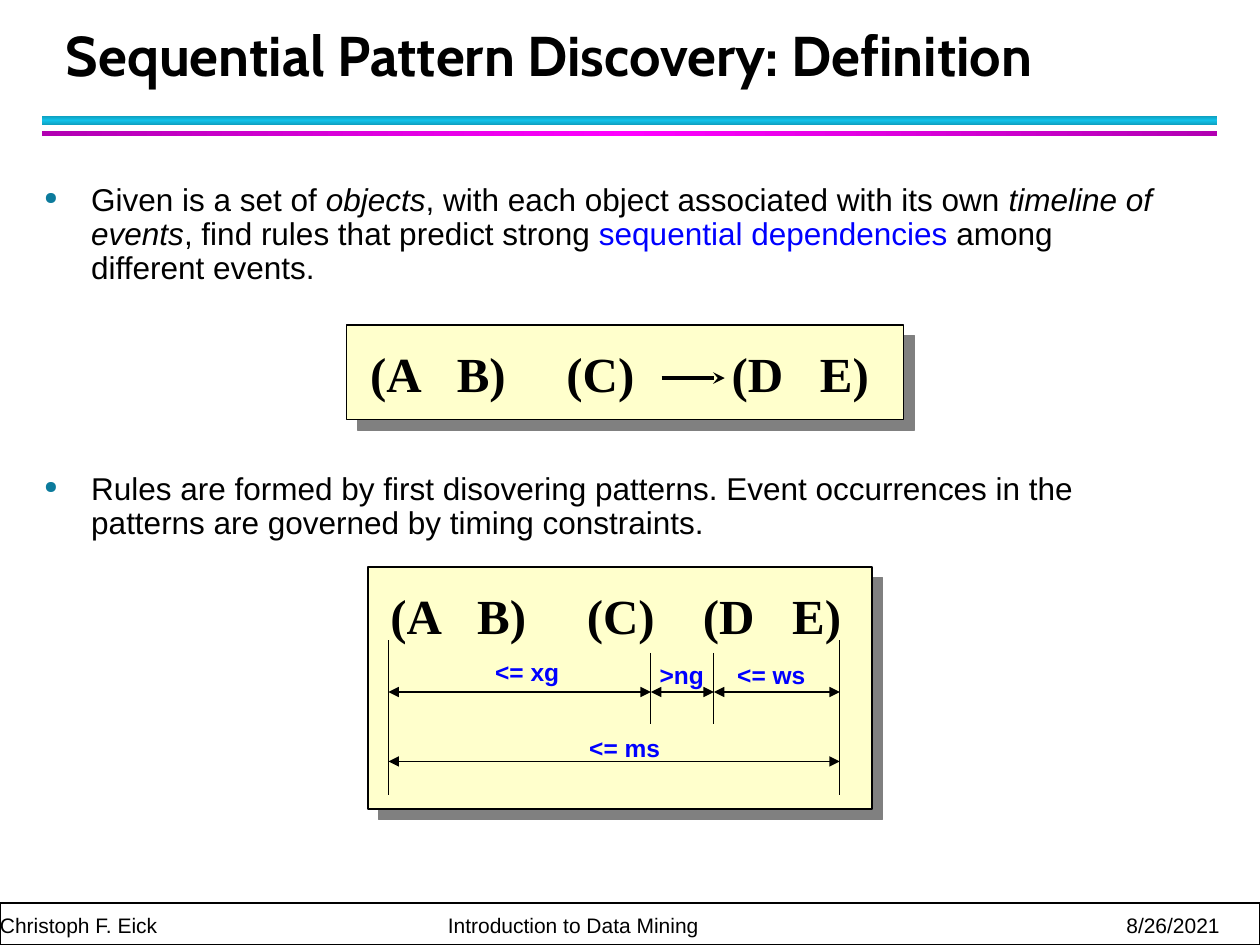
from copy import deepcopy
from dataclasses import dataclass

from lxml.etree import SubElement
from pptx import Presentation
from pptx.dml.color import RGBColor
from pptx.enum.shapes import MSO_CONNECTOR as CONN, MSO_SHAPE as SHAPE
from pptx.enum.text import MSO_ANCHOR as ANCHOR, MSO_AUTO_SIZE as AUTO, PP_ALIGN as ALIGN
from pptx.oxml.ns import qn
from pptx.util import Cm, Pt


@dataclass(frozen=True)
class Theme:
    black: str = "000000"
    white: str = "FFFFFF"
    blue: str = "0000FF"
    cream: str = "FFFFCC"
    gray: str = "808080"
    bullet: str = "0C7B9C"
    cyan: tuple = ("0E9BBA", "12C2E9")
    magenta: tuple = ("B200B2", "FF00FF")
    title_font: str = "Cabin"
    body_font: str = "Arial"
    pattern_font: str = "Times New Roman"
    title: int = 32
    pattern: int = 28
    body: int = 18
    label: int = 14
    footer: int = 12


T = Theme()
rgb = RGBColor.from_string


def add_xml(parent, tag, **attrs):
    return SubElement(parent, qn(tag), {k: str(v) for k, v in attrs.items()})


def set_font(p, name, size, color=T.black, bold=False):
    f = p.font
    f.name, f.size, f.bold = name, Pt(size), bold
    f.color.rgb = rgb(color)


def add_tabs(p, stops):
    tabs = add_xml(p._p.get_or_add_pPr(), "a:tabLst")
    for pos, align in stops:
        add_xml(tabs, "a:tab", pos=Cm(pos), algn=align)


def add_rect(s, x, y, w, h, fill=None, line=None):
    sp = s.shapes.add_shape(SHAPE.RECTANGLE, Cm(x), Cm(y), Cm(w), Cm(h))
    sp.shadow.inherit = False
    if fill:
        sp.fill.solid()
        sp.fill.fore_color.rgb = rgb(fill)
    if line:
        sp.line.color.rgb = rgb(T.black)
        sp.line.width = Pt(line)
    else:
        sp.line.fill.background()
    return sp


def add_bar(s, y, h, colors, angle):
    """Rule under the title, shaded from edge to middle and back."""
    sp = add_rect(s, 0.84, y, 23.7, h)
    sp.fill.gradient()
    sp.fill.gradient_angle = angle
    stops = sp.fill.gradient_stops
    for stop, color, pos in zip(stops, colors, (0, 0.5)):
        stop.color.rgb = rgb(color)
        stop.position = pos
    stop_list = sp._element.spPr.find(".//" + qn("a:gsLst"))
    end = deepcopy(stop_list[0])
    end.set("pos", "100000")
    stop_list.append(end)


def add_panel(s, x, y, w, h):
    sp = add_rect(s, x, y, w, h, T.cream, 0.75)
    effects = sp._element.spPr.find(qn("a:effectLst"))
    shadow = add_xml(effects, "a:outerShdw", dist=Pt(8.5), dir=45 * 60000,
                     algn="ctr", rotWithShape=0)
    add_xml(shadow, "a:srgbClr", val=T.gray)


def add_text(s, x, y, w, h):
    tf = s.shapes.add_textbox(Cm(x), Cm(y), Cm(w), Cm(h)).text_frame
    tf.word_wrap = True
    return tf


def add_pattern(s, x, y, w, stops):
    p = add_text(s, x, y, w, 1.45).paragraphs[0]
    p.text = "(A\tB)\t(C)\t(D\tE)"
    add_tabs(p, [(pos, "l") for pos in stops])
    set_font(p, T.pattern_font, T.pattern, bold=True)


def add_label(s, text, x, y, w):
    tf = add_text(s, x, y, w, 0.84)
    tf.margin_left = tf.margin_right = 0
    p = tf.paragraphs[0]
    p.text = text
    p.alignment = ALIGN.CENTER
    set_font(p, T.body_font, T.label, T.blue, bold=True)


def add_line(s, x1, y1, x2, y2, width=0.75, head=None, tail=None):
    c = s.shapes.add_connector(CONN.STRAIGHT, Cm(x1), Cm(y1), Cm(x2), Cm(y2))
    c.line.color.rgb = rgb(T.black)
    c.line.width = Pt(width)
    ln = c._element.spPr.find(qn("a:ln"))
    for tag, kind in (("a:headEnd", head), ("a:tailEnd", tail)):
        if kind:
            add_xml(ln, tag, type=kind)
    add_xml(c._element.spPr, "a:effectLst")


def add_bullet(s, y, h, pieces):
    """Bulleted paragraph from (text, style) pieces."""
    p = add_text(s, 0.64, y, 23.28, h).paragraphs[0]
    p.line_spacing = 0.9
    pPr = p._p.get_or_add_pPr()
    pPr.set("marL", str(Cm(0.95)))
    pPr.set("indent", str(-Cm(0.95)))
    add_xml(add_xml(pPr, "a:buClr"), "a:srgbClr", val=T.bullet)
    add_xml(pPr, "a:buSzPct", val=55000)
    add_xml(pPr, "a:buChar", char="●")
    set_font(p, T.body_font, T.body)
    for text, style in pieces:
        r = p.add_run()
        r.text = text
        if style == "italic":
            r.font.italic = True
        elif style == "key":
            r.font.color.rgb = rgb(T.blue)


def add_title(s, text):
    sp = s.shapes.title
    sp.left, sp.top, sp.width, sp.height = Cm(1.07), Cm(0.43), Cm(24.33), Cm(1.47)
    tf = sp.text_frame
    tf.text = text
    tf.auto_size = AUTO.NONE
    tf.vertical_anchor = ANCHOR.BOTTOM
    p = tf.paragraphs[0]
    p.alignment = ALIGN.LEFT
    p.line_spacing = Pt(36)
    set_font(p, T.title_font, T.title, bold=True)


def add_footer(s, author, course, date):
    add_rect(s, 0, 18.21, 25.4, 0.84, T.white, 1)
    tf = add_text(s, 0, 18.27, 25.35, 0.64)
    tf.margin_left = tf.margin_right = tf.margin_top = tf.margin_bottom = 0
    tf.vertical_anchor = ANCHOR.BOTTOM
    p = tf.paragraphs[0]
    p.text = "\t".join((author, course, date))
    p.line_spacing = Pt(20)
    add_tabs(p, [(9.03, "l"), (24.59, "r")])
    set_font(p, T.body_font, T.footer)


def add_rule_panel(s):
    add_panel(s, 6.99, 6.55, 11.23, 1.91)
    add_pattern(s, 7.21, 6.81, 10.64, (1.75, 3.96, 7.29, 9.07))
    add_line(s, 13.34, 7.62, 14.61, 7.62, 2.25, tail="stealth")


def add_timing_panel(s):
    add_panel(s, 7.42, 11.43, 10.16, 4.88)
    add_pattern(s, 7.62, 11.68, 9.9, (1.75, 3.96, 6.3, 8.1))
    for text, x, y, w in (("<= ms", 11.63, 14.66, 1.93), ("<= xg", 9.73, 13.13, 1.8),
                          (">ng", 13.06, 13.18, 1.37), ("<= ws", 14.61, 13.18, 1.88)):
        add_label(s, text, x, y, w)

    marks = (7.83, 13.12, 14.39, 16.93)
    first, *inner, last = marks
    spans = [(first, last, 15.35)] + [(a, b, 13.95) for a, b in zip(marks, marks[1:])]
    for a, b, y in spans:
        add_line(s, a, y, b, y, head="triangle", tail="triangle")
    for x in marks:
        top, bottom = (13.16, 14.6) if x in inner else (12.91, 16.03)
        add_line(s, x, top, x, bottom)


def main():
    prs = Presentation()
    prs.slide_width, prs.slide_height = Cm(25.4), Cm(19.05)
    s = prs.slides.add_slide(prs.slide_layouts[5])
    add_footer(s, "Christoph F. Eick", "Introduction to Data Mining", "8/26/2021")
    add_bar(s, 2.33, 0.2, T.cyan, 90)
    add_bar(s, 2.64, 0.1, T.magenta, 0)
    add_title(s, "Sequential Pattern Discovery: Definition")
    add_bullet(s, 3.59, 2.4, [
        ("Given is a set of ", None), ("objects", "italic"),
        (", with each object associated with its own ", None),
        ("timeline of events", "italic"),
        (", find rules that predict strong ", None),
        ("sequential dependencies", "key"), (" among different events.", None)])
    add_bullet(s, 9.41, 1.7, [
        ("Rules are formed by first disovering patterns. Event occurrences in the "
         "patterns are governed by timing constraints.", None)])
    add_timing_panel(s)
    add_rule_panel(s)
    prs.save("out.pptx")


if __name__ == "__main__":
    main()
